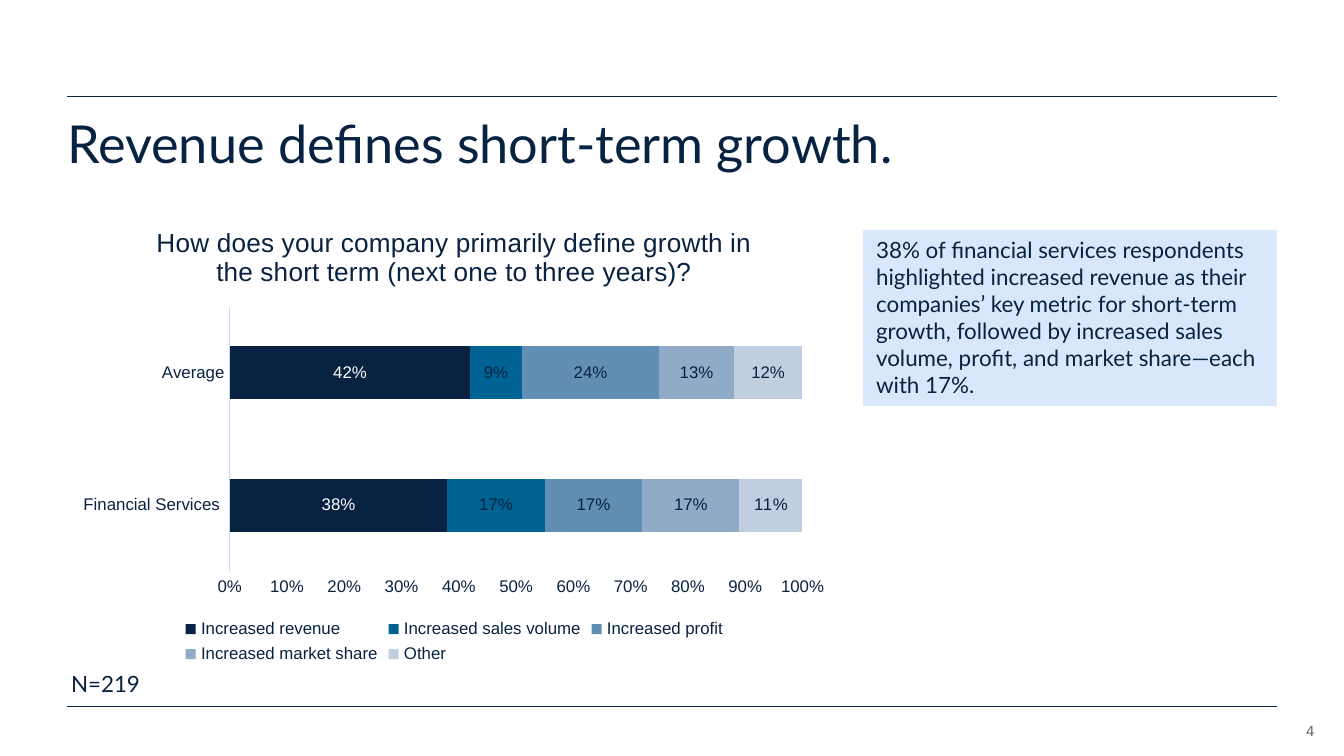
from lxml import etree
from pptx import Presentation
from pptx.chart.data import CategoryChartData
from pptx.dml.color import RGBColor
from pptx.enum.chart import XL_CHART_TYPE as ChartType, XL_LABEL_POSITION as LabelPos
from pptx.enum.chart import XL_LEGEND_POSITION as LegendPos, XL_TICK_MARK as TickMark
from pptx.enum.shapes import MSO_CONNECTOR as Connector, MSO_SHAPE as Shape
from pptx.enum.text import MSO_ANCHOR as Anchor, PP_ALIGN as Align
from pptx.oxml.ns import qn
from pptx.util import Inches, Pt

NAVY, WHITE, PALE, AXIS, GREY = "082241", "FFFFFF", "D8E8FA", "C5DCF8", "666666"


def color(value):
    return RGBColor.from_string(value)


def style_font(font, size, face="Arial", ink=NAVY):
    font.size = Pt(size)
    font.name = face
    font.bold = False
    font.color.rgb = color(ink)


def write(frame, text, size=12, face="Lato", ink=NAVY, align=Align.LEFT,
          anchor=Anchor.TOP, inset=None, spacing=None):
    frame.word_wrap = True
    frame.vertical_anchor = anchor
    if inset is not None:
        frame.margin_left = frame.margin_right = Inches(inset)
        frame.margin_top = frame.margin_bottom = Inches(inset)
    paragraph = frame.paragraphs[0]
    paragraph.alignment = align
    paragraph.line_spacing = spacing
    run = paragraph.add_run()
    run.text = text
    style_font(run.font, size, face, ink)


class SlideBuilder:
    def __init__(self, slide):
        self.slide = slide
        self.shapes = slide.shapes

    def title(self, text, left, top, width, height):
        heading = self.shapes.title
        heading.left, heading.top = Inches(left), Inches(top)
        heading.width, heading.height = Inches(width), Inches(height)
        write(heading.text_frame, text, size=28, inset=0, spacing=0.9)

    def rule(self, y):
        line = self.shapes.add_connector(
            Connector.STRAIGHT, Inches(0.5), Inches(y), Inches(9.5), Inches(y))
        line.line.color.rgb = color(NAVY)
        line.line.width = Pt(0.5)
        etree.SubElement(line._element.spPr, qn("a:effectLst"))

    def text(self, text, left, top, width, height, **style):
        box = self.shapes.add_textbox(
            Inches(left), Inches(top), Inches(width), Inches(height))
        write(box.text_frame, text, **style)

    def callout(self, text, left, top, width, height, fill):
        panel = self.shapes.add_shape(
            Shape.RECTANGLE, Inches(left), Inches(top), Inches(width), Inches(height))
        panel.shadow.inherit = False
        panel.fill.solid()
        panel.fill.fore_color.rgb = color(fill)
        panel.line.fill.background()
        write(panel.text_frame, text)

    def stacked_bars(self, question, categories, answers, left, top, width, height, plot):
        data = CategoryChartData(number_format="0%")
        data.categories = categories
        for name, values, _, _ in answers:
            data.add_series(name, values)
        chart = self.shapes.add_chart(
            ChartType.BAR_STACKED_100, Inches(left), Inches(top),
            Inches(width), Inches(height), data).chart
        style_font(chart.font, 10)
        chart.has_title = True
        heading = chart.chart_title.text_frame.paragraphs[0].add_run()
        heading.text = question
        style_font(heading.font, 14)
        chart.chart_title.include_in_layout = False

        chart.has_legend = True
        chart.legend.position = LegendPos.BOTTOM
        chart.legend.include_in_layout = False
        style_font(chart.legend.font, 9)

        for axis in (chart.category_axis, chart.value_axis):
            axis.has_major_gridlines = False
            axis.major_tick_mark = axis.minor_tick_mark = TickMark.NONE
            style_font(axis.tick_labels.font, 9)
        chart.category_axis.format.line.color.rgb = color(AXIS)
        chart.category_axis.format.line.width = Pt(0.75)
        scale = chart.value_axis
        scale.format.line.fill.background()
        scale.minimum_scale, scale.maximum_scale, scale.major_unit = 0, 1, 0.1
        scale.tick_labels.number_format = "0%"
        scale.tick_labels.number_format_is_linked = False

        bars = chart.plots[0]
        bars.gap_width, bars.overlap = 150, 100
        bars.vary_by_categories = False
        for series, (_, _, fill, ink) in zip(bars.series, answers):
            series.format.fill.solid()
            series.format.fill.fore_color.rgb = color(fill)
            labels = series.data_labels
            labels.show_value = True
            labels.position = LabelPos.CENTER
            labels.number_format = "0%"
            labels.number_format_is_linked = False
            style_font(labels.font, 9, ink=ink)
        self.place_plot(chart, plot)

    def place_plot(self, chart, plot):
        area = chart._chartSpace.find(".//" + qn("c:plotArea"))
        for old in area.findall(qn("c:layout")):
            area.remove(old)
        layout = etree.Element(qn("c:layout"))
        area.insert(0, layout)
        manual = etree.SubElement(layout, qn("c:manualLayout"))
        settings = [("layoutTarget", "inner"), ("xMode", "edge"), ("yMode", "edge")]
        for tag, value in settings + list(zip("xywh", plot)):
            etree.SubElement(manual, qn(f"c:{tag}")).set("val", str(value))


def main():
    deck = Presentation()
    deck.slide_width = Inches(10)
    deck.slide_height = deck.slide_width * 9 // 16
    page = SlideBuilder(deck.slides.add_slide(deck.slide_layouts[5]))

    for y in (0.72, 5.26):
        page.rule(y)
    page.text("4", 9.31, 5.32, 0.47, 0.18, size=8, face="Arial", ink=GREY,
              align=Align.RIGHT, anchor=Anchor.BOTTOM, inset=0)
    page.title("Revenue defines short-term growth.", 0.5, 0.88, 9, 0.55)
    page.callout(
        "38% of financial services respondents highlighted increased revenue as their "
        "companies’ key metric for short-term growth, followed by increased sales "
        "volume, profit, and market share—each with 17%.",
        6.42, 1.71, 3.08, 1.31, PALE)
    page.text("N=219", 0.43, 4.94, 1.81, 0.3)

    answers = [
        ("Increased revenue", (0.38, 0.42), NAVY, WHITE),
        ("Increased sales volume", (0.17, 0.09), "006393", NAVY),
        ("Increased profit", (0.17, 0.24), "618EB3", NAVY),
        ("Increased market share", (0.17, 0.13), "8FABC8", NAVY),
        ("Other", (0.11, 0.12), "C1CEDF", NAVY),
    ]
    page.stacked_bars(
        "How does your company primarily define growth in the short term "
        "(next one to three years)?",
        ["Financial Services ", "Average"], answers,
        0.5, 1.52, 5.76, 3.46, plot=(0.21, 0.22, 0.74, 0.57))
    deck.save("out.pptx")


if __name__ == "__main__":
    main()
